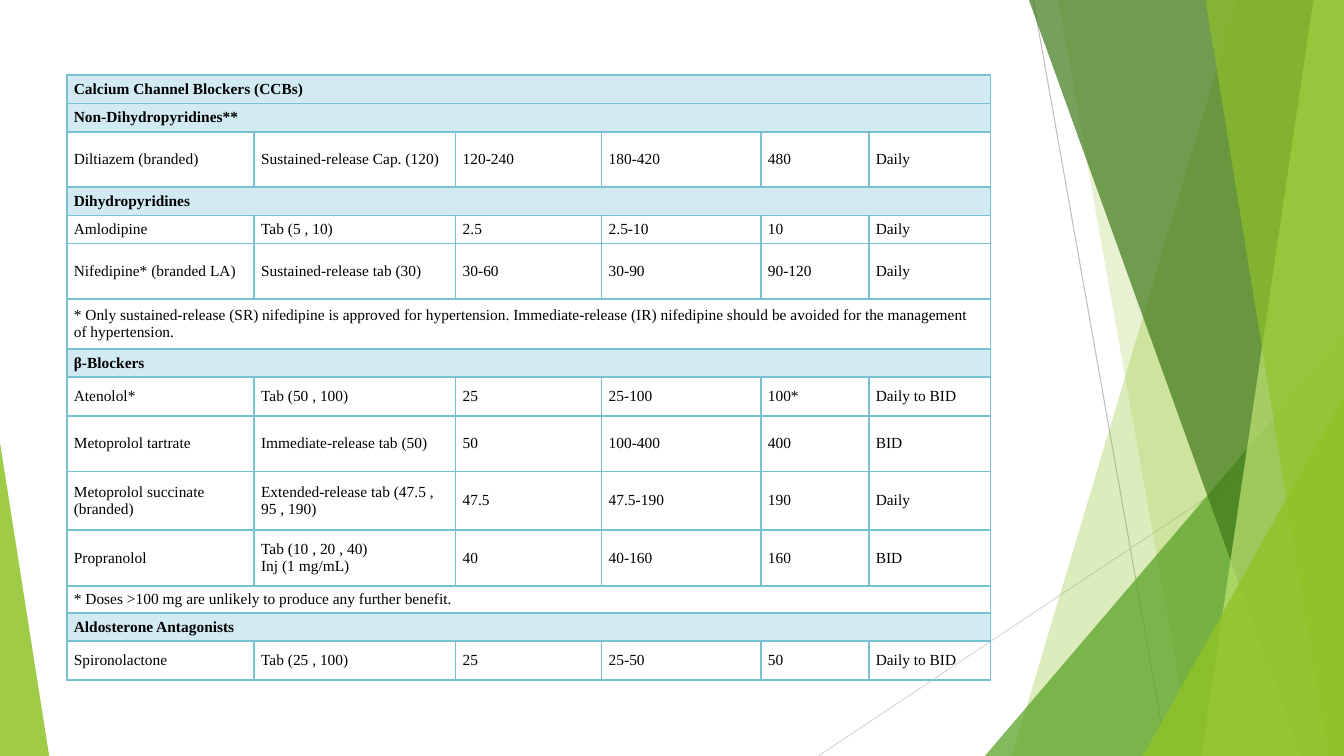
from dataclasses import dataclass

from pptx import Presentation
from pptx.dml.color import RGBColor
from pptx.enum.shapes import MSO_CONNECTOR, MSO_SHAPE
from pptx.enum.text import MSO_ANCHOR, PP_ALIGN
from pptx.oxml import parse_xml
from pptx.oxml.ns import nsdecls
from pptx.oxml.xmlchemy import OxmlElement
from pptx.util import Cm, Pt

STRAIGHT = MSO_CONNECTOR.STRAIGHT
TRIANGLE = MSO_SHAPE.ISOSCELES_TRIANGLE
MIDDLE = MSO_ANCHOR.MIDDLE
LEFT, JUSTIFY = PP_ALIGN.LEFT, PP_ALIGN.JUSTIFY


@dataclass(frozen=True)
class Theme:
    """Colours, font and sizes of the slide."""
    font: str = "Times New Roman"
    size: float = 11
    text: str = "000000"
    heading: str = "D2EAF1"
    border: str = "78C0D4"
    border_width: float = 1.5
    lime: str = "90C226"
    pale: str = "C0E474"
    green: str = "54A021"
    dark: str = "3F7819"
    grey: str = "BFBFBF"
    light_grey: str = "D9D9D9"
    hairline: float = 0.75


THEME = Theme()
SLIDE_W, SLIDE_H = 33.87, 19.05
COLUMNS = [4.72, 5.08, 3.68, 4.01, 2.72, 3.07]

ROWS = [
    (0.71, ["Calcium Channel Blockers (CCBs)"], [0]),
    (0.71, ["Non-Dihydropyridines**"], [0]),
    (1.41, ["Diltiazem (branded)", "Sustained-release Cap. (120)",
            "120-240", "180-420", "480", "Daily"], [1, 2, 3, 4]),
    (0.71, ["Dihydropyridines"], [0]),
    (0.71, ["Amlodipine", "Tab (5 , 10)", "2.5", "2.5-10", "10", "Daily"], []),
    (1.41, ["Nifedipine* (branded LA)", "Sustained-release tab (30)",
            "30-60", "30-90", "90-120", "Daily"], [1]),
    (1.25, ["* Only sustained-release (SR) nifedipine is approved for hypertension. "
            "Immediate-release (IR) nifedipine should be avoided for the management "
            "of hypertension."], [0]),
    (0.71, ["β-Blockers"], [0]),
    (0.98, ["Atenolol*", "Tab (50 , 100)", "25", "25-100", "100*", "Daily to BID"], []),
    (1.41, ["Metoprolol tartrate", "Immediate-release tab (50)",
            "50", "100-400", "400", "BID"], [1]),
    (1.48, ["Metoprolol succinate (branded)", "Extended-release tab (47.5 , 95 , 190)",
            "47.5", "47.5-190", "190", "Daily"], [0, 1]),
    (1.41, ["Propranolol", "Tab (10 , 20 , 40)\nInj (1 mg/mL)",
            "40", "40-160", "160", "BID"], []),
    (0.69, ["* Doses >100 mg are unlikely to produce any further benefit."], [0]),
    (0.71, ["Aldosterone Antagonists"], [0]),
    (0.98, ["Spironolactone", "Tab (25 , 100)", "25", "25-50", "50", "Daily to BID"], []),
]


def paint(sp, color, opacity):
    """Fill a shape with a translucent colour and no outline."""
    sp.shadow.inherit = False
    sp.line.fill.background()
    sp.fill.solid()
    sp.fill.fore_color.rgb = RGBColor.from_string(color)
    alpha = OxmlElement("a:alpha")
    alpha.set("val", str(opacity * 1000))
    sp._element.spPr.xpath("a:solidFill/a:srgbClr")[0].append(alpha)


def add_hairline(s, x1, y1, x2, y2, color):
    """Draw a thin straight line."""
    line = s.shapes.add_connector(STRAIGHT, Cm(x1), Cm(y1), Cm(x2), Cm(y2))
    line.line.color.rgb = RGBColor.from_string(color)
    line.line.width = Pt(THEME.hairline)
    line._element.spPr.append(OxmlElement("a:effectLst"))


def add_triangle(s, left, top, right, bottom, apex, color, opacity):
    """Draw a triangle whose apex sits at a fraction of its width."""
    sp = s.shapes.add_shape(TRIANGLE, Cm(left), Cm(top), Cm(right - left), Cm(bottom - top))
    sp.adjustments[0] = apex
    paint(sp, color, opacity)


def add_band(s, top_x, bottom_x, top, right, bottom, color, opacity):
    """Draw a full-height band with a slanted left edge."""
    builder = s.shapes.build_freeform(Cm(top_x), Cm(top), scale=1)
    builder.add_line_segments([(Cm(right), Cm(top)), (Cm(right), Cm(bottom)),
                               (Cm(bottom_x), Cm(bottom))])
    paint(builder.convert_to_shape(), color, opacity)


def add_facets(s, left, top, width, height):
    """Place the overlapping green facets in the right-hand box."""
    right, bottom = left + width, top + height
    add_hairline(s, left + 5.42, top, left + 8.79, bottom, THEME.grey)
    add_hairline(s, right, top + 10.24, left, bottom, THEME.light_grey)

    def bands(specs):
        """Draw bands given as top x, bottom x, colour and opacity."""
        for top_x, bottom_x, color, opacity in specs:
            add_band(s, left + top_x, left + bottom_x, top, right, bottom, color, opacity)

    bands([(10.57, 4.88, THEME.lime, 30), (6.05, 9.43, THEME.lime, 20)])
    add_triangle(s, left + 4.2, top + 8.46, right, bottom, 1, THEME.green, 72)
    bands([(5.31, 12.17, THEME.dark, 70), (12.48, 9.66, THEME.pale, 70),
           (9.76, 12.86, THEME.lime, 65)])
    add_triangle(s, left + 8.18, top + 9.98, right, bottom, 1, THEME.lime, 80)


def add_borders(cell):
    """Outline all four sides of a table cell."""
    tc_pr = cell._tc.get_or_add_tcPr()
    for side in "LRTB":
        tc_pr.append(parse_xml(
            f'<a:ln{side} {nsdecls("a")} w="{Pt(THEME.border_width)}"><a:solidFill>'
            f'<a:srgbClr val="{THEME.border}"/></a:solidFill></a:ln{side}>'))


def format_cell(cell, align, heading):
    """Set the borders, fill, margins and type of a table cell."""
    add_borders(cell)
    if heading:
        cell.fill.solid()
        cell.fill.fore_color.rgb = RGBColor.from_string(THEME.heading)
    else:
        cell.fill.background()
    cell.margin_left = cell.margin_right = Cm(0.18)
    cell.margin_top = cell.margin_bottom = 0
    cell.vertical_anchor = MIDDLE
    for p in cell.text_frame.paragraphs:
        p.alignment = align
        p.font.name = THEME.font
        p.font.size = Pt(THEME.size)
        p.font.bold = heading
        p.font.color.rgb = RGBColor.from_string(THEME.text)


def add_drug_table(s, left, top, width, height):
    """Place the dosing table, merging headings and notes across it."""
    table = s.shapes.add_table(len(ROWS), len(COLUMNS), Cm(left), Cm(top),
                               Cm(width), Cm(height)).table
    table.first_row = table.horz_banding = False
    for column, share in zip(table.columns, COLUMNS):
        column.width = Cm(width * share / sum(COLUMNS))
    total = sum(row[0] for row in ROWS)
    for i, (row_height, texts, left_columns) in enumerate(ROWS):
        table.rows[i].height = Cm(height * row_height / total)
        spanning = len(texts) == 1
        heading = spanning and not texts[0].startswith("*")
        if spanning:
            table.cell(i, 0).merge(table.cell(i, len(COLUMNS) - 1))
        for j, text in enumerate(texts):
            table.cell(i, j).text = text
        for j in range(len(COLUMNS)):
            format_cell(table.cell(i, j), LEFT if j in left_columns else JUSTIFY, heading)


def main():
    """Build the slide and save it."""
    prs = Presentation()
    prs.slide_width, prs.slide_height = Cm(SLIDE_W), Cm(SLIDE_H)
    s = prs.slides.add_slide(prs.slide_layouts[6])
    add_facets(s, 20.62, 0, 13.25, SLIDE_H)
    add_triangle(s, 0, 11.15, 1.24, SLIDE_H, 0, THEME.lime, 85)
    add_drug_table(s, 1.68, 1.9, 23.28, 15.24)
    prs.save("out.pptx")


if __name__ == "__main__":
    main()
